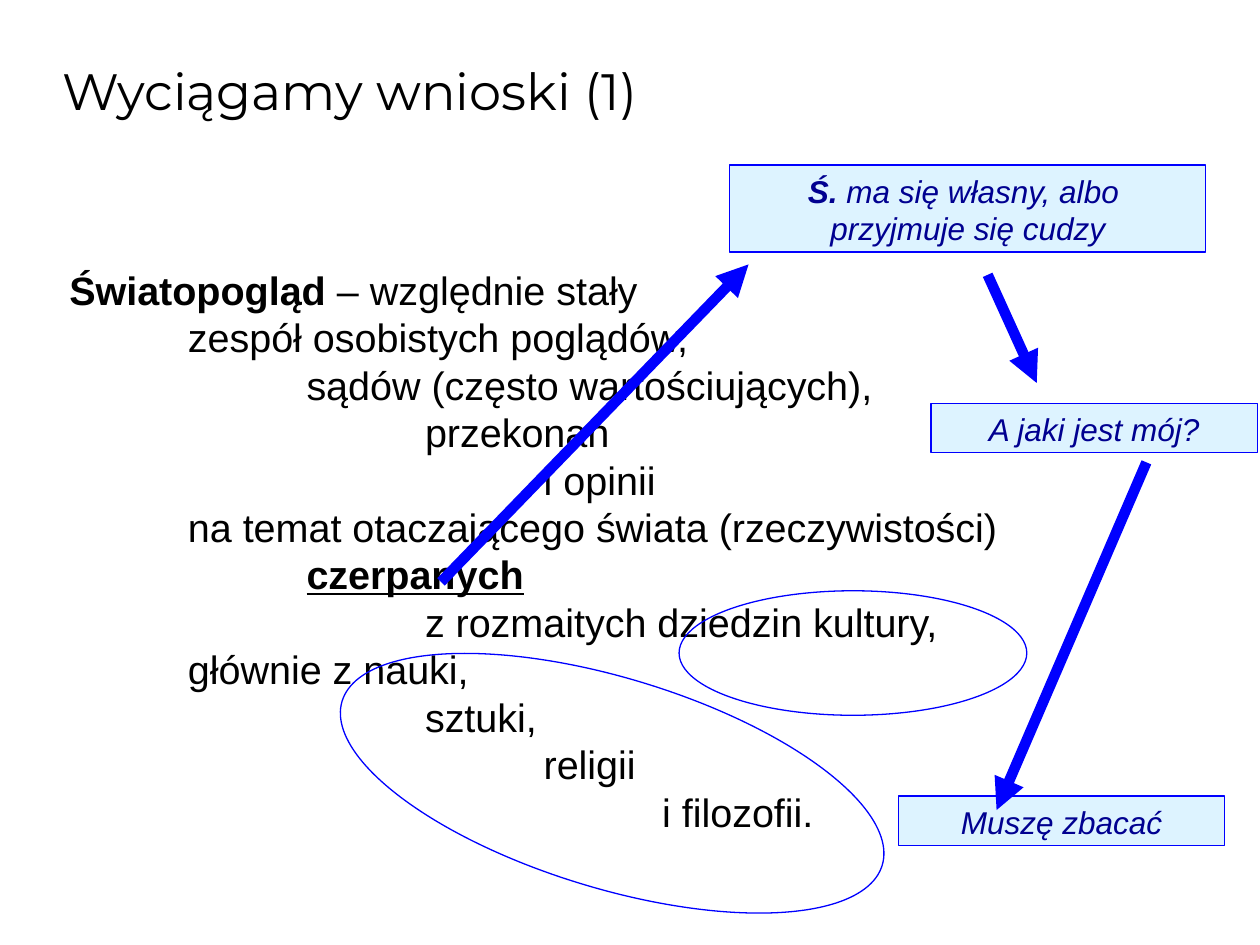
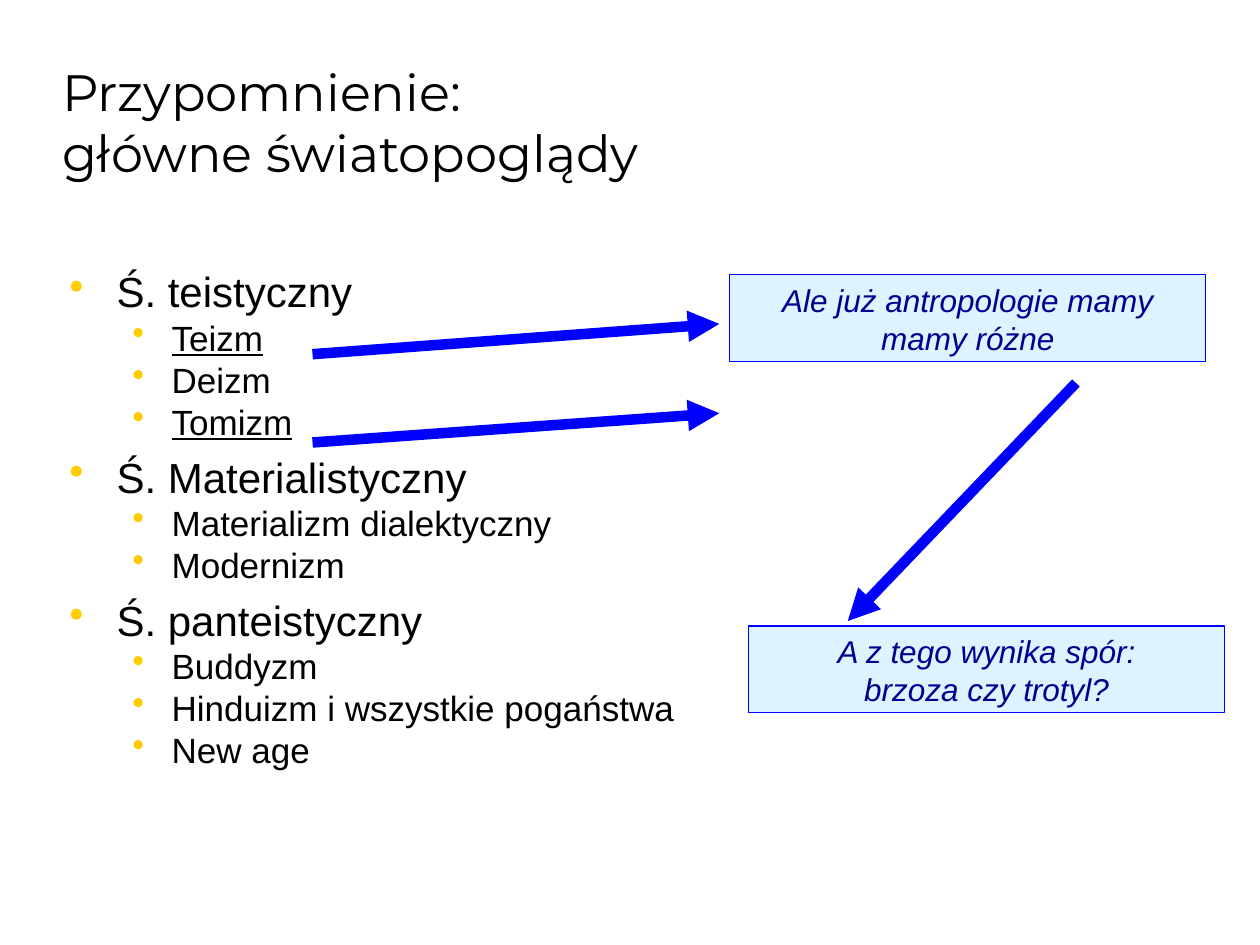
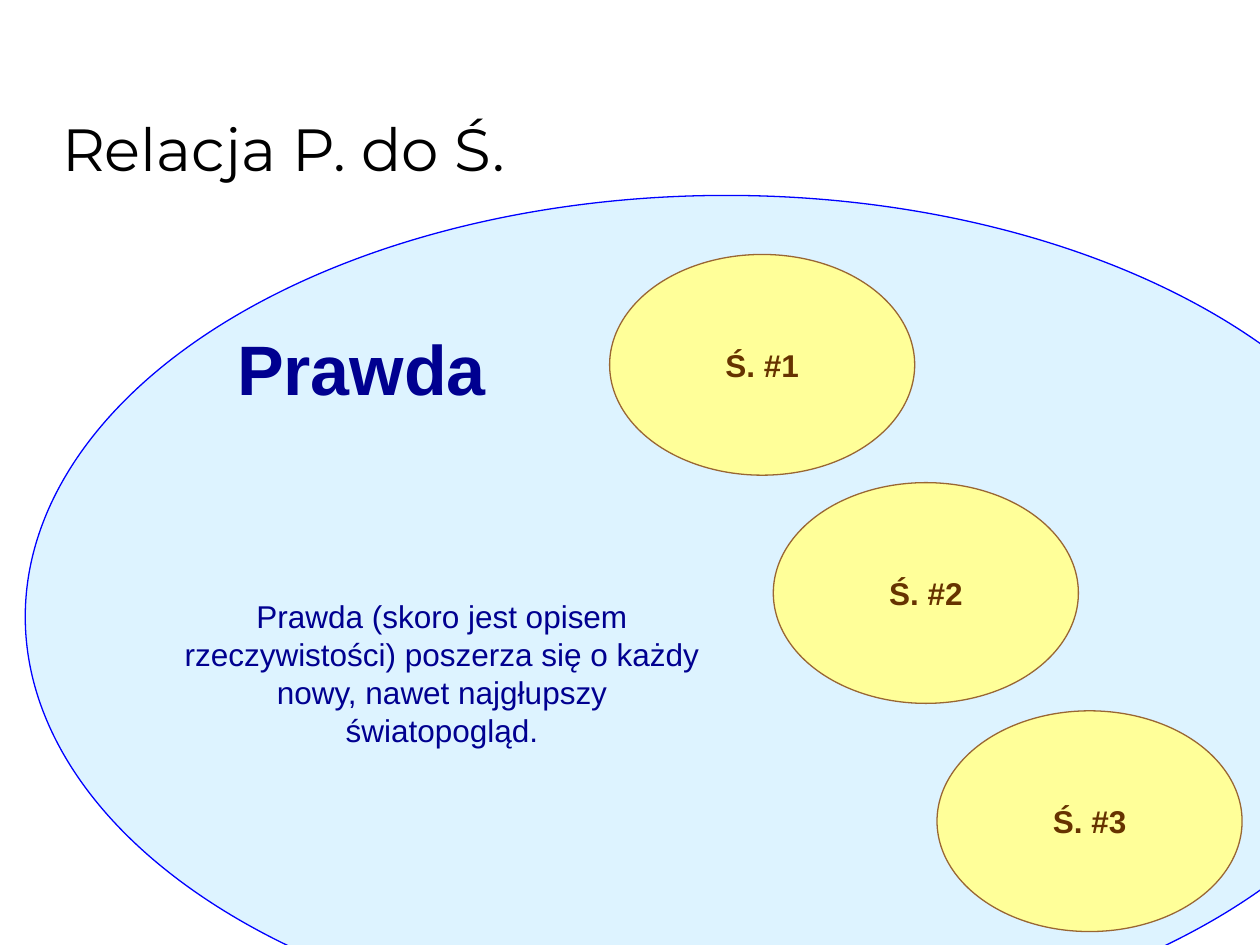
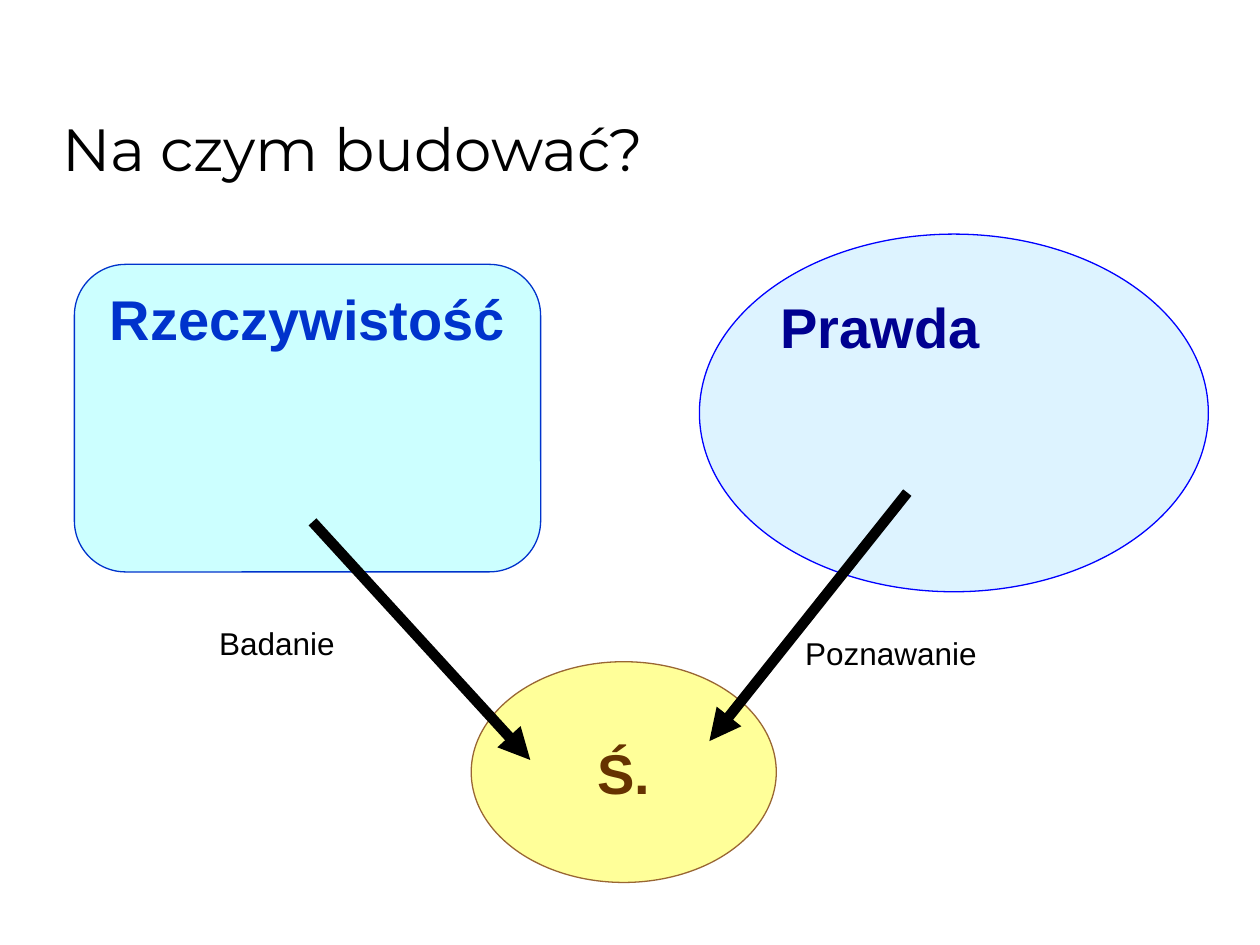
from lxml.etree import SubElement
from pptx import Presentation
from pptx.dml.color import RGBColor
from pptx.enum.shapes import MSO_CONNECTOR as Link, MSO_SHAPE as Kind
from pptx.enum.text import MSO_ANCHOR as Anchor, MSO_AUTO_SIZE as Fit, PP_ALIGN as Align
from pptx.oxml.ns import qn
from pptx.util import Cm, Pt

BLACK = RGBColor(0x00, 0x00, 0x00)
BLUE = RGBColor(0x00, 0x00, 0xFF)
NAVY = RGBColor(0x00, 0x00, 0x90)
ROYAL = RGBColor(0x00, 0x33, 0xCC)
SKY = RGBColor(0xDD, 0xF3, 0xFF)
CYAN = RGBColor(0xCC, 0xFF, 0xFF)
YELLOW = RGBColor(0xFF, 0xFF, 0x99)
TAN = RGBColor(0x99, 0x66, 0x33)
BROWN = RGBColor(0x66, 0x33, 0x00)
GOLD = RGBColor(0xFF, 0xCC, 0x00)

TITLE = (1.12, 0.64, 21.59, 3.18)
BODY = (1.27, 5.23, 22.71, 11.58)
PAD = 0.13
TAB = 2.39
WIDE, SLIM = (9.6, 1.75), (6.58, 0.99)
OVAL = (6.15, 4.45)
FRAME = dict(word_wrap=True, auto_size=Fit.SHAPE_TO_FIT_TEXT, vertical_anchor=Anchor.TOP,
             margin_left=Cm(PAD), margin_right=Cm(PAD), margin_top=Cm(PAD), margin_bottom=Cm(PAD))

CREED = [
    (0, " – względnie stały "),
    (1, "zespół osobistych poglądów, "),
    (2, "sądów (często wartościujących), "),
    (3, "przekonań "),
    (4, "i opinii "),
    (1, "na temat otaczającego świata (rzeczywistości)"),
    (2, ""),
]
ROOTS = [
    (0, " "),
    (3, "z rozmaitych dziedzin kultury,"),
    (1, "głównie z nauki, "),
    (3, "sztuki, "),
    (4, "religii "),
    (5, "i filozofii."),
]
VIEWS = {
    "Ś. teistyczny": ["Teizm", "Deizm", "Tomizm"],
    "Ś. Materialistyczny": ["Materializm dialektyczny", "Modernizm"],
    "Ś. panteistyczny": ["Buddyzm", "Hinduizm i wszystkie pogaństwa", "New age"],
}
MARKED = ("Teizm", "Tomizm")


def assign(item, values):
    """Set every attribute in the dict on the item."""
    for name, value in values.items():
        setattr(item, name, value)


def measure(box):
    """Turn a box in centimetres into lengths."""
    return [Cm(side) for side in box]


def write(para, runs, size, color=BLACK, face="Arial", align=Align.LEFT, **style):
    """Write (text, extra style) runs, with line breaks, into a paragraph."""
    para.alignment = align
    for text, extra in runs:
        for row, line in enumerate(text.split("\n")):
            if row:
                para.add_line_break()
            if line:
                run = para.add_run()
                run.text = line
                assign(run.font, dict(name=face, size=Pt(size), **{**style, **extra}))
                run.font.color.rgb = color


def add_text(shapes, box, runs, size, frame=None, **style):
    """Add a text box holding one paragraph."""
    note = shapes.add_textbox(*measure(box))
    assign(note.text_frame, {**FRAME, **(frame or {})})
    write(note.text_frame.paragraphs[0], runs, size, **style)
    return note


def add_form(shapes, kind, box, line, fill=None):
    """Add a thin-lined shape, hollow when no fill is given."""
    form = shapes.add_shape(kind, *measure(box))
    form.shadow.inherit = False
    form.line.color.rgb = line
    form.line.width = Pt(0.75)
    if fill is None:
        form.fill.background()
    else:
        form.fill.solid()
        form.fill.fore_color.rgb = fill
    return form


def add_card(slide, spot, extent, runs):
    """Add a pale blue remark in italics."""
    card = add_form(slide.shapes, Kind.RECTANGLE, spot + extent, BLUE, SKY)
    assign(card.text_frame, FRAME)
    write(card.text_frame.paragraphs[0], runs, 18, NAVY, align=Align.CENTER, italic=True)


def add_group(slide, kind, box, line, fill, text, inner, size, color, anchor=Anchor.TOP,
              align=Align.LEFT):
    """Group a shape with a bold label placed relative to its corner."""
    shapes = slide.shapes.add_group_shape().shapes
    add_form(shapes, kind, box, line, fill)
    left, top, width, height = inner
    add_text(shapes, (box[0] + left, box[1] + top, width, height), [(text, {})], size,
             dict(word_wrap=False, vertical_anchor=anchor), color=color, align=align, bold=True)


def add_view(slide, spot, text, size, extent):
    """Add a yellow oval with a label in its middle."""
    inset = tuple((whole - part) / 2 for whole, part in zip(OVAL, extent))
    add_group(slide, Kind.OVAL, spot + OVAL, TAN, YELLOW, text, inset + extent, size, BROWN,
              Anchor.MIDDLE, Align.CENTER)


def add_arrow(slide, start, end, color=BLUE):
    """Draw a thick arrow between two points."""
    arrow = slide.shapes.add_connector(Link.STRAIGHT, *measure(start + end))
    arrow.line.color.rgb = color
    arrow.line.width = Pt(6)
    SubElement(arrow.line._get_or_add_ln(), qn("a:tailEnd"), type="triangle")
    SubElement(arrow._element.spPr, qn("a:effectLst"))


def add_slide(deck, text, size, foot=PAD):
    """Add a slide with its title sitting above the foot margin."""
    slide = deck.slides.add_slide(deck.slide_layouts[5])
    title = slide.shapes.title
    assign(title, dict(zip(("left", "top", "width", "height"), measure(TITLE))))
    assign(title.text_frame, {**FRAME, "auto_size": Fit.NONE, "vertical_anchor": Anchor.BOTTOM,
                              "margin_bottom": Cm(foot)})
    write(title.text_frame.paragraphs[0], [(text, {})], size, face="Montserrat")
    return slide


def add_stairs(slide, box):
    """Add the definition, its lines stepped by tabs."""
    opening, closing = ("\n".join("\t" * step + line for step, line in rows)
                        for rows in (CREED, ROOTS))
    note = slide.shapes.add_textbox(*measure(box))
    assign(note.text_frame, {**FRAME, "auto_size": Fit.NONE})
    para = note.text_frame.paragraphs[0]
    stops = SubElement(para._p.get_or_add_pPr(), qn("a:tabLst"))
    for step in range(1, 6):
        SubElement(stops, qn("a:tab"), pos=str(Cm(TAB * step)), algn="l")
    write(para, [("Światopogląd", dict(bold=True)), (opening, {}),
                 ("czerpanych", dict(bold=True, underline=True)), (closing, {})], 22.6)


def add_bullet(para, level):
    """Give a paragraph a gold bullet and its hanging indent."""
    para.level = level
    left, hang = ((0.95, 0.95), (2.06, 0.79))[level]
    props = para._p.get_or_add_pPr()
    props.set("marL", str(Cm(left)))
    props.set("indent", str(-Cm(hang)))
    tint = SubElement(props, qn("a:buClr"))
    SubElement(tint, qn("a:srgbClr"), val=str(GOLD))
    SubElement(props, qn("a:buChar"), char="•")


def add_list(slide, box):
    """Add the two-level list of views."""
    note = slide.shapes.add_textbox(*measure(box))
    frame = note.text_frame
    assign(frame, {**FRAME, "auto_size": Fit.NONE})
    rows = [(level, text) for head, items in VIEWS.items()
            for level, text in [(0, head)] + [(1, item) for item in items]]
    for order, (level, text) in enumerate(rows):
        para = frame.add_paragraph() if order else frame.paragraphs[0]
        add_bullet(para, level)
        para.space_before = Pt(5 if order and not level else 0)
        write(para, [(text, dict(underline=True) if text in MARKED else {})], (24, 20)[level])


def show_creed(deck):
    """Build the slide with the definition."""
    slide = add_slide(deck, "Wyciągamy wnioski (1)", 29.2, 1.38)
    add_stairs(slide, BODY)
    add_card(slide, (14.71, 3.33), WIDE,
             [("Ś.", dict(bold=True)), (" ma się własny, albo \nprzyjmuje się cudzy", {})])
    add_form(slide.shapes, Kind.OVAL, (13.69, 11.91, 7.01, 2.51), BLUE)
    ring = add_form(slide.shapes, Kind.OVAL, (6.65, 13.67, 11.38, 4.24), BLUE)
    ring.rotation = 16.9
    add_arrow(slide, (19.91, 5.54), (20.9, 7.72))
    add_card(slide, (18.77, 8.13), SLIM, [("A jaki jest mój?", {})])
    add_arrow(slide, (8.89, 11.73), (15.09, 5.33))
    add_card(slide, (18.11, 16.05), SLIM, [("Muszę zbacać", {})])
    add_arrow(slide, (23.11, 9.32), (20.09, 16.33))


def show_views(deck):
    """Build the slide that lists the views."""
    slide = add_slide(deck, "Przypomnienie:\ngłówne światopoglądy", 29.2)
    add_list(slide, BODY)
    add_arrow(slide, (6.3, 7.14), (14.5, 6.53))
    add_card(slide, (14.71, 5.54), WIDE, [("Ale już antropologie mamy mamy różne", {})])
    add_arrow(slide, (6.3, 8.92), (14.5, 8.33))
    add_arrow(slide, (21.69, 7.72), (17.09, 12.52))
    add_card(slide, (15.09, 12.62), WIDE, [("A z tego wynika spór:\nbrzoza czy trotyl?", {})])


def show_truth(deck):
    """Build the slide with the views inside the truth."""
    slide = add_slide(deck, "Relacja P. do Ś.", 34)
    add_group(slide, Kind.OVAL, (0.51, 3.94, 28.27, 16.99), BLUE, SKY, "Prawda",
              (4.14, 2.49, 5.31, 1.8), 40, NAVY)
    for step in range(3):
        add_view(slide, (12.29 + 3.3 * step, 5.13 + 4.6 * step), f"Ś. #{step + 1}", 18,
                 (1.78, 0.97))
    add_text(slide.shapes, (3.51, 11.91, 10.8, 3.2),
             [("Prawda (skoro jest opisem rzeczywistości) poszerza się o każdy nowy, "
               "nawet najgłupszy światopogląd.", {})], 18, color=NAVY, align=Align.CENTER)


def show_base(deck):
    """Build the slide with the two bases of a view."""
    slide = add_slide(deck, "Na czym budować?", 34)
    add_group(slide, Kind.ROUNDED_RECTANGLE, (1.5, 5.33, 9.4, 6.2), ROYAL, CYAN,
              "Rzeczywistość", (0.51, 0.28, 8.38, 4.52), 32, ROYAL, align=Align.CENTER)
    add_view(slide, (9.5, 13.34), "Ś.", 32, (1.35, 1.52))
    add_group(slide, Kind.OVAL, (14.1, 4.72, 10.26, 7.21), BLUE, SKY, "Prawda",
              (1.5, 1.04, 4.29, 1.52), 32, NAVY)
    add_arrow(slide, (6.3, 10.52), (10.69, 15.32), BLACK)
    add_arrow(slide, (18.29, 9.93), (14.3, 14.94), BLACK)
    add_text(slide.shapes, (16.1, 12.65, 6.6, 0.97), [("Poznawanie", {})], 18)
    add_text(slide.shapes, (4.29, 12.45, 6.6, 0.97), [("Badanie", {})], 18)


def main():
    """Build and save the deck."""
    deck = Presentation()
    deck.slide_width, deck.slide_height = Cm(25.4), Cm(19.05)
    for show in (show_creed, show_views, show_truth, show_base):
        show(deck)
    deck.save("out.pptx")


if __name__ == "__main__":
    main()
